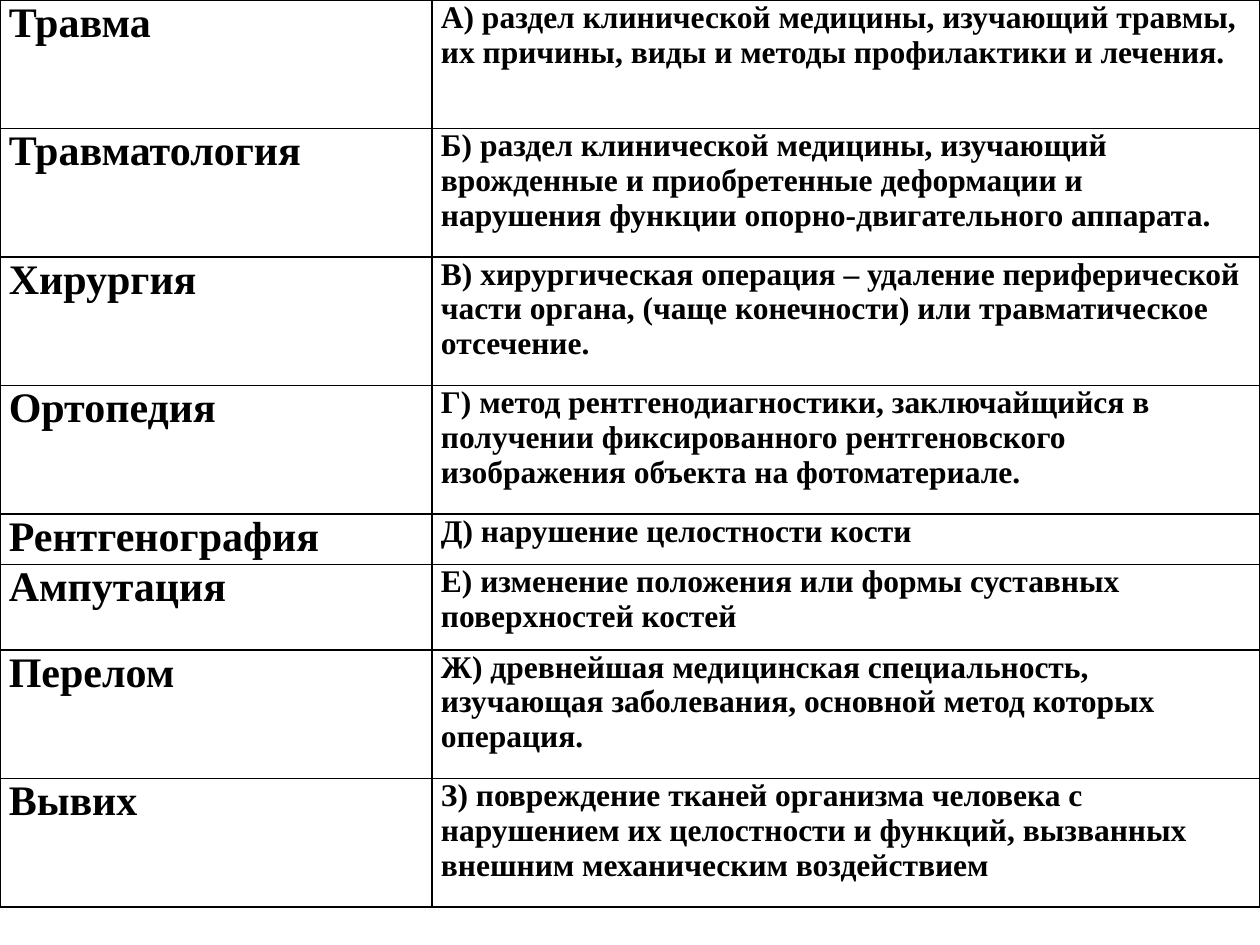
"""Builds a slide that lists medical terms beside lettered definitions."""
from lxml import etree
from pptx import Presentation
from pptx.dml.color import RGBColor
from pptx.oxml.ns import qn
from pptx.util import Inches, Pt

BLACK = RGBColor(0, 0, 0)
BLANK_LAYOUT = 6
BORDER_SIDES = ("a:lnL", "a:lnR", "a:lnT", "a:lnB")

COLUMN_WIDTHS = (3.43, 6.57)
LINE_ROW, TWO_LINE_ROW, TALL_ROW = 0.4, 0.68, 1.02
TERMS = (
    ("Травма", "А) раздел клинической медицины, изучающий травмы, их причины, "
     "виды и методы профилактики и лечения.", TALL_ROW),
    ("Травматология", "Б) раздел клинической медицины, изучающий врожденные и "
     "приобретенные деформации и нарушения функции опорно-двигательного аппарата.", TALL_ROW),
    ("Хирургия", "В) хирургическая операция – удаление периферической части органа, "
     "(чаще конечности) или травматическое отсечение.", TALL_ROW),
    ("Ортопедия", "Г) метод рентгенодиагностики, заключайщийся в получении "
     "фиксированного рентгеновского изображения объекта на фотоматериале.", TALL_ROW),
    ("Рентгенография", "Д) нарушение целостности кости", LINE_ROW),
    ("Ампутация", "Е) изменение положения или формы суставных поверхностей костей",
     TWO_LINE_ROW),
    ("Перелом", "Ж) древнейшая медицинская специальность, изучающая заболевания, "
     "основной метод которых операция.", TALL_ROW),
    ("Вывих", "З) повреждение тканей организма человека с нарушением их целостности "
     "и функций, вызванных внешним механическим воздействием", TALL_ROW),
)


def write_text(frame, text, *, font, size, color, bold=True, hanging=0):
    paragraph = frame.paragraphs[0]
    run = paragraph.add_run()
    run.text = text
    run.font.name = font
    run.font.size = Pt(size)
    run.font.bold = bold
    run.font.color.rgb = color
    if hanging:
        properties = paragraph._p.get_or_add_pPr()
        properties.set("marL", str(Inches(hanging)))
        properties.set("indent", str(-Inches(hanging)))


class TermSlide:
    font = "Times New Roman"
    ink = BLACK
    term_size = 24
    definition_size = 18
    hanging = 0.38
    border_width = 1

    def __init__(self, slide):
        self.slide = slide

    def add_borders(self, cell):
        properties = cell._tc.get_or_add_tcPr()
        for position, side in enumerate(BORDER_SIDES):
            border = etree.Element(qn(side), w=str(Pt(self.border_width)))
            fill = etree.SubElement(border, qn("a:solidFill"))
            etree.SubElement(fill, qn("a:srgbClr"), val=str(self.ink))
            properties.insert(position, border)

    def fill_cell(self, cell, text, **style):
        cell.margin_left = cell.margin_right = Inches(0.07)
        cell.margin_top = cell.margin_bottom = 0
        cell.fill.background()
        self.add_borders(cell)
        write_text(cell.text_frame, text, font=self.font, color=self.ink, **style)

    def add_terms(self, terms, widths):
        height = sum(row_height for _, _, row_height in terms)
        table = self.slide.shapes.add_table(
            len(terms), len(widths), 0, 0, Inches(sum(widths)), Inches(height)).table
        table.first_row = table.horz_banding = False
        for column, width in zip(table.columns, widths):
            column.width = Inches(width)
        for row, (term, definition, row_height) in zip(table.rows, terms):
            row.height = Inches(row_height)
            term_cell, definition_cell = row.cells
            self.fill_cell(term_cell, term, size=self.term_size, hanging=self.hanging)
            self.fill_cell(definition_cell, definition, size=self.definition_size)


def main():
    deck = Presentation()
    deck.slide_width, deck.slide_height = Inches(10), Inches(7.5)
    terms_slide = TermSlide(deck.slides.add_slide(deck.slide_layouts[BLANK_LAYOUT]))
    terms_slide.add_terms(TERMS, COLUMN_WIDTHS)
    deck.save("out.pptx")


if __name__ == "__main__":
    main()
